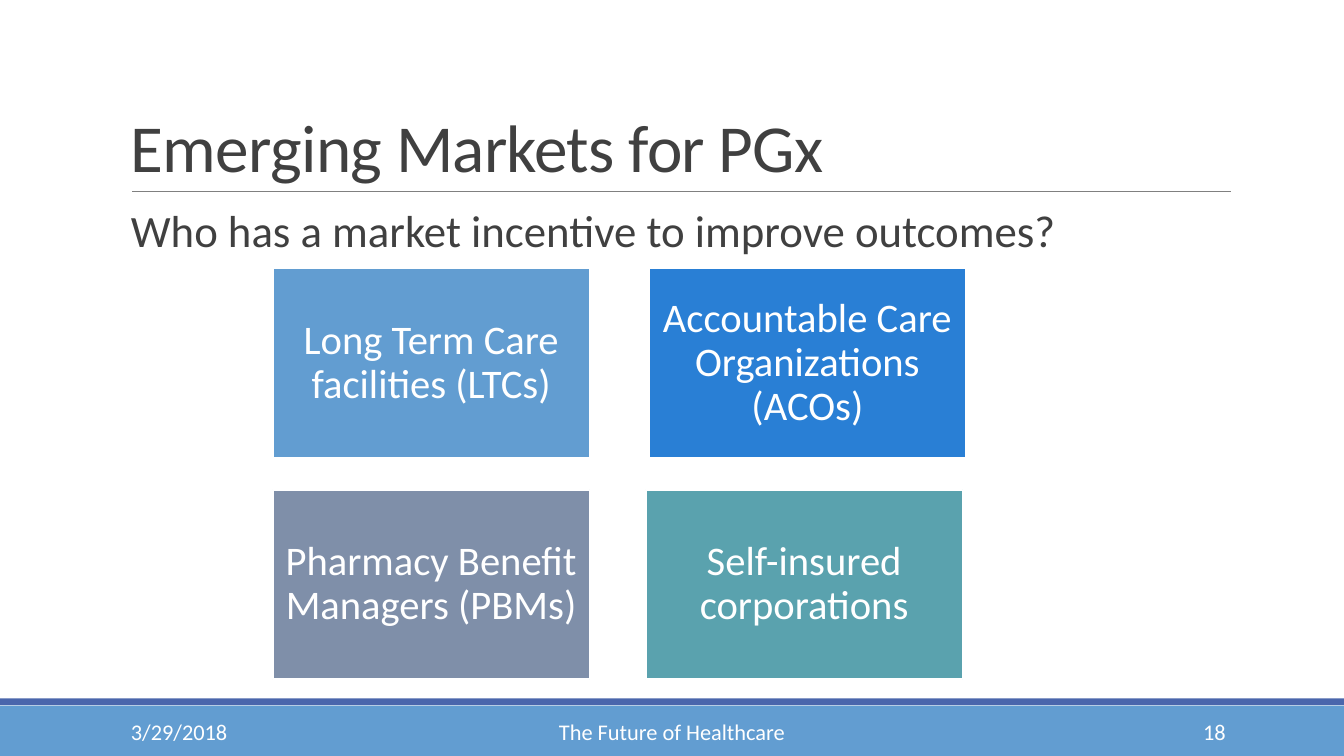
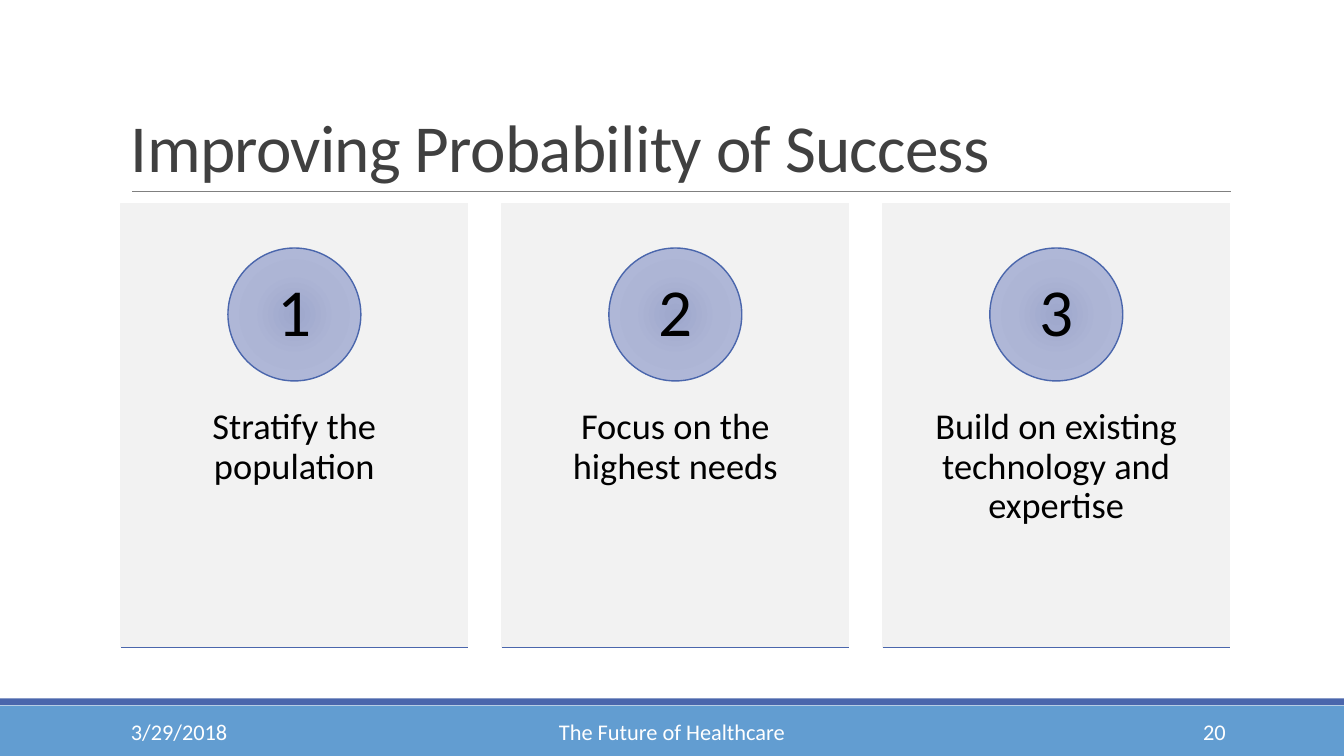
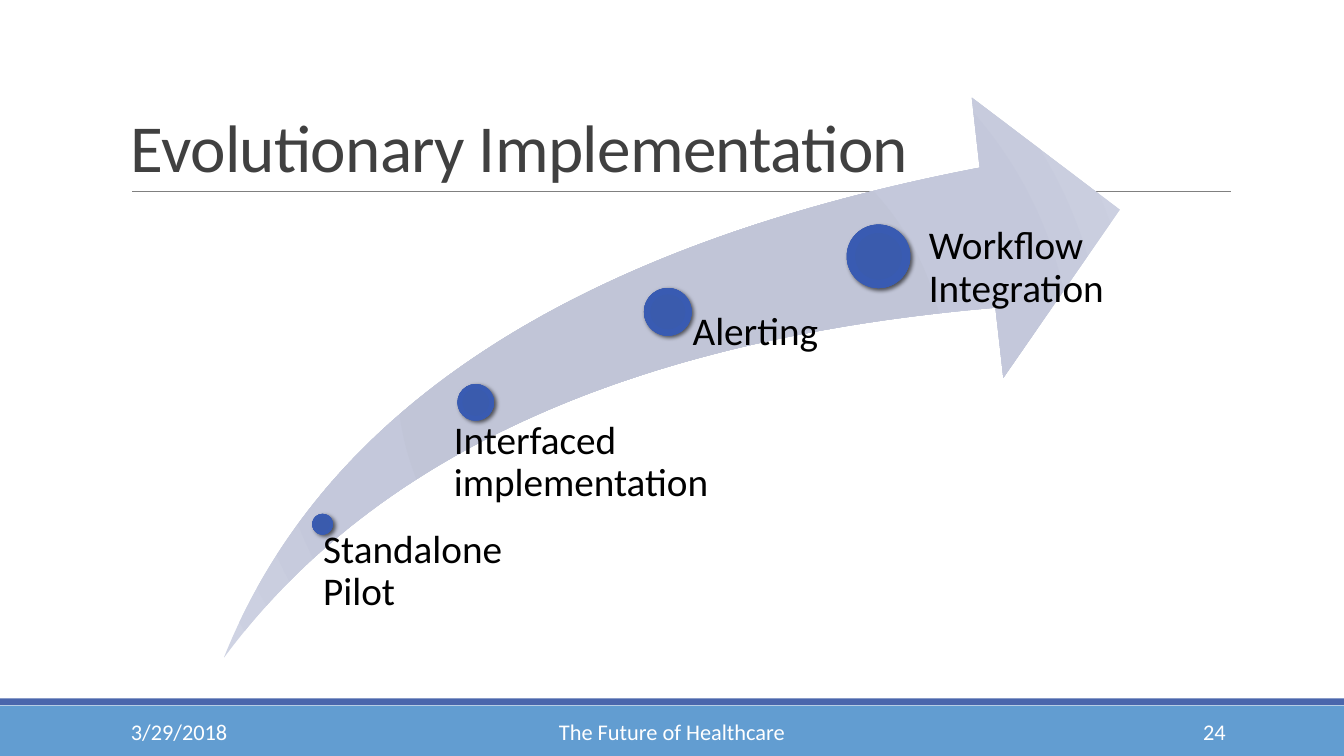
from pptx import Presentation
from pptx.dml.color import RGBColor
from pptx.enum.shapes import MSO_CONNECTOR, MSO_SHAPE
from pptx.enum.text import MSO_ANCHOR, MSO_AUTO_SIZE, PP_ALIGN
from pptx.oxml import parse_xml
from pptx.oxml.ns import nsdecls, qn
from pptx.util import Cm, Pt
from lxml.etree import SubElement

HUES = {
    "white": "FFFFFF",
    "black": "000000",
    "ink": "404040",
    "rule": "808080",
    "panel": "F2F2F2",
    "navy": "4A66AC",
    "sky": "629DD1",
    "blue": "297FD5",
    "slate": "7F8FA9",
    "teal": "5AA2AE",
}
FONT = "Calibri"
WIDE, HIGH = 33.87, 19.05
LEFT, SPAN = 3.05, 27.94
DISC = [(0, "9EA7CC"), (45, "ADB5D5"), (100, "B4BCDC")]
SWOOSH = [(0, "BFC3D6"), (34, "C1C5D7"), (70, "C4C8DB"), (100, "CFD3E3")]
DOT = [(0, "3759AE"), (34, "3A5BAD"), (70, "395BB2"), (100, "4564B1")]


def hue(name):
    return RGBColor.from_string(HUES[name])


def write(shape, text, size, color, align=PP_ALIGN.LEFT,
          anchor=MSO_ANCHOR.TOP, pad=(0.25, 0.13, 0.25, 0.13), gap=0.9):
    frame = shape.text_frame
    frame.word_wrap = True
    frame.auto_size = MSO_AUTO_SIZE.NONE
    frame.vertical_anchor = anchor
    frame.margin_left, frame.margin_top, frame.margin_right, frame.margin_bottom = map(Cm, pad)
    frame.text = text
    para = frame.paragraphs[0]
    para.alignment = align
    para.line_spacing = gap
    para.font.name = FONT
    para.font.size = Pt(size)
    para.font.color.rgb = hue(color)
    return para


def label(slide, box, text, size, color, **style):
    shape = slide.shapes.add_textbox(*map(Cm, box))
    write(shape, text, size, color, **style)


def block(slide, kind, box, fill=None, edge=None, width=1):
    shape = slide.shapes.add_shape(kind, *map(Cm, box))
    shape.shadow.inherit = False
    if fill:
        shape.fill.solid()
        shape.fill.fore_color.rgb = hue(fill)
    if edge:
        shape.line.color.rgb = hue(edge)
        shape.line.width = Pt(width)
    else:
        shape.line.fill.background()
    return shape


def glow(shape, stops):
    shape.fill.background()
    marks = "".join(
        f'<a:gs pos="{pos * 1000}"><a:srgbClr val="{tone}"/></a:gs>' for pos, tone in stops)
    fill = parse_xml(
        f'<a:gradFill {nsdecls("a")} rotWithShape="1"><a:gsLst>{marks}</a:gsLst>'
        '<a:path path="circle"><a:fillToRect l="100000" t="100000" r="100000" b="100000"/>'
        '</a:path></a:gradFill>')
    props = shape._element.spPr
    props.replace(props.find(qn("a:noFill")), fill)


def shade(shape):
    effects = shape._element.spPr.find(qn("a:effectLst"))
    drop = SubElement(effects, qn("a:outerShdw"), blurRad=str(Pt(3)), dist=str(Pt(2)),
                      dir="2700000", algn="tl", rotWithShape="0")
    tone = SubElement(drop, qn("a:srgbClr"), val=HUES["black"])
    SubElement(tone, qn("a:alpha"), val="60000")


def line(slide, left, right, top, color, width):
    rule = slide.shapes.add_connector(
        MSO_CONNECTOR.STRAIGHT, Cm(left), Cm(top), Cm(right), Cm(top))
    rule.line.color.rgb = hue(color)
    rule.line.width = Pt(width)
    SubElement(rule._element.spPr, qn("a:effectLst"))


def start(deck, title, number):
    slide = deck.slides.add_slide(deck.slide_layouts[5])
    block(slide, MSO_SHAPE.RECTANGLE, (0, 17.78, WIDE, 1.27), "sky")
    block(slide, MSO_SHAPE.RECTANGLE, (0, 17.6, WIDE, 0.17), "navy")
    line(slide, 3.33, 31.01, 4.83, "rule", 0.5)
    head = slide.shapes.title
    head.left, head.top, head.width, head.height = map(Cm, (LEFT, 0.79, SPAN, 4.04))
    para = write(head, title, 48, "ink", anchor=MSO_ANCHOR.BOTTOM, gap=0.85)
    para.runs[0]._r.get_or_add_rPr().set("spc", "-50")
    for left, width, text, align in (
        (LEFT, 6.86, "3/29/2018", PP_ALIGN.LEFT),
        (10.24, 13.39, "The Future of Healthcare", PP_ALIGN.CENTER),
        (27.51, 3.63, str(number), PP_ALIGN.RIGHT),
    ):
        label(slide, (left, 17.93, width, 1.02), text, 16, "white",
              align=align, anchor=MSO_ANCHOR.MIDDLE, gap=1.0)
    return slide


def markets(deck):
    slide = start(deck, "Emerging Markets for PGx", 18)
    label(slide, (LEFT, 5.13, SPAN, 11.18),
          "Who has a market incentive to improve outcomes?", 32, "ink",
          pad=(0.25, 0.13, 0, 0.13))
    for left, top, fill, text in (
        (6.88, 6.76, "sky", "Long Term Care facilities (LTCs)"),
        (16.36, 6.76, "blue", "Accountable Care Organizations (ACOs)"),
        (6.88, 12.34, "slate", "Pharmacy Benefit Managers (PBMs)"),
        (16.28, 12.34, "teal", "Self-insured corporations"),
    ):
        tile = block(slide, MSO_SHAPE.RECTANGLE, (left, top, 7.98, 4.78), fill, "white", 1.25)
        write(tile, text, 29, "white", PP_ALIGN.CENTER, MSO_ANCHOR.MIDDLE, (0.3,) * 4)


def success(deck):
    slide = start(deck, "Improving Probability of Success", 20)
    top, width, height, size = 5.13, 8.74, 11.18, 3.35
    steps = ("Stratify the population", "Focus on the highest needs",
             "Build on existing technology and expertise")
    for index, text in enumerate(steps):
        left = LEFT + index * 9.6
        card = block(slide, MSO_SHAPE.RECTANGLE, (left, top, width, height), "panel", "panel")
        write(card, text, 26, "black", PP_ALIGN.CENTER, pad=(0.69, 5.16, 0.69, 0.91))
        disc = block(slide, MSO_SHAPE.OVAL,
                     (left + (width - size) / 2, 6.25, size, size), edge="navy")
        glow(disc, DISC)
        write(disc, str(index + 1), 48, "black", PP_ALIGN.CENTER, MSO_ANCHOR.MIDDLE,
              (0.25, 0.03, 0.25, 0.03))
        line(slide, left, left + width, top + height, "navy", 1)


def growth(deck):
    slide = start(deck, "Evolutionary Implementation", 24)
    arrow = block(slide, MSO_SHAPE.SWOOSH_ARROW, (5.64, 2.46, 22.58, 14.12))
    arrow.adjustments[0] = arrow.adjustments[1] = 0.25
    glow(arrow, SWOOSH)
    for left, top, size, box, text in (
        (7.87, 12.95, 0.52, (7.87, 13.34, 5.56, 3.28), "Standalone Pilot"),
        (11.53, 9.68, 0.92, (10.95, 10.59, 7.42, 6.45), "Interfaced implementation"),
        (16.23, 7.26, 1.2, (16.82, 7.86, 4.75, 8.71), "Alerting"),
        (21.34, 5.66, 1.6, (22.56, 5.69, 5.66, 9.37), "Workflow Integration"),
    ):
        dot = block(slide, MSO_SHAPE.OVAL, (left, top, size, size))
        glow(dot, DOT)
        shade(dot)
        label(slide, box, text, 28, "black", pad=(size * 0.53, 0, 0, 0))


def main():
    deck = Presentation()
    deck.slide_width, deck.slide_height = Cm(WIDE), Cm(HIGH)
    markets(deck)
    success(deck)
    growth(deck)
    deck.save("out.pptx")


if __name__ == "__main__":
    main()
